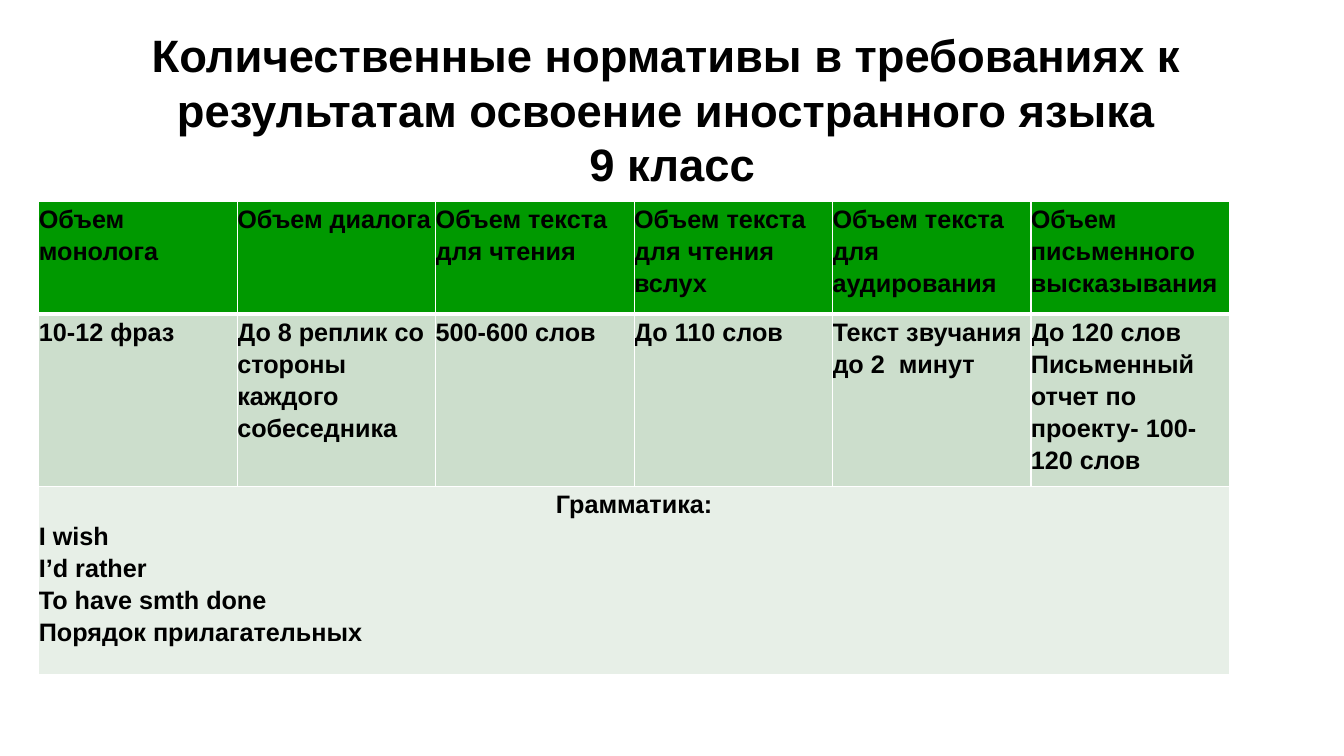
from pptx import Presentation
from pptx.dml.color import RGBColor
from pptx.enum import text
from pptx.oxml import parse_xml
from pptx.oxml.ns import nsdecls
from pptx.util import Cm, Pt

FONT = "Arial"
COLORS = {
    "ink": "000000",
    "border": "FFFFFF",
    "header": "009900",
    "norms": "CCDECC",
    "grammar": "E7EFE7",
}
TITLE = (
    "Количественные нормативы в требованиях к \v"
    "результатам освоение иностранного языка \v"
    "9 класс"
)
HEADERS = [
    "Объем монолога",
    "Объем диалога",
    "Объем текста для чтения",
    "Объем текста для чтения вслух",
    "Объем текста для аудирования",
    "Объем письменного высказывания",
]
NORMS = [
    "10-12 фраз",
    "До 8 реплик со стороны каждого собеседника",
    "500-600 слов",
    "До 110 слов",
    "Текст звучания до 2  минут",
    "До 120 слов\nПисьменный отчет по проекту- 100-120 слов",
]
GRAMMAR = "Грамматика:\nI wish\nI’d rather \nTo have smth done\nПорядок прилагательных"
ROW_HEIGHTS = [Cm(2.84), Cm(3.81), Cm(4.75)]
COLUMN_WIDTH = Cm(5)


def style_runs(paragraph, size):
    for run in paragraph.runs:
        run.font.name = FONT
        run.font.size = Pt(size)
        run.font.bold = True
        run.font.color.rgb = RGBColor.from_string(COLORS["ink"])


def add_title(slide):
    frame = slide.shapes.add_textbox(Cm(1.7), Cm(0.6), Cm(30.48), Cm(4.3)).text_frame
    frame.word_wrap = True
    frame.vertical_anchor = text.MSO_ANCHOR.MIDDLE
    frame.text = TITLE
    heading = frame.paragraphs[0]
    heading.alignment = text.PP_ALIGN.CENTER
    style_runs(heading, 32.4)


def set_borders(cell, bottom_width):
    properties = cell._tc.get_or_add_tcPr()
    widths = {"lnL": 1, "lnR": 1, "lnT": 1, "lnB": bottom_width}
    for position, (side, width) in enumerate(widths.items()):
        border = parse_xml(
            f'<a:{side} {nsdecls("a")} w="{Pt(width)}"><a:solidFill>'
            f'<a:srgbClr val="{COLORS["border"]}"/></a:solidFill></a:{side}>'
        )
        properties.insert(position, border)


def fill_cell(cell, content, color, bottom_width=1):
    cell.margin_left = cell.margin_right = cell.margin_top = cell.margin_bottom = 0
    cell.fill.solid()
    cell.fill.fore_color.rgb = RGBColor.from_string(COLORS[color])
    set_borders(cell, bottom_width)
    cell.text_frame.text = content
    for paragraph in cell.text_frame.paragraphs:
        paragraph.line_spacing = 1.14
        style_runs(paragraph, 18)


def add_norms_table(slide):
    columns = len(HEADERS)
    table = slide.shapes.add_table(
        len(ROW_HEIGHTS), columns, Cm(0.98), Cm(5.08),
        COLUMN_WIDTH * columns, sum(ROW_HEIGHTS),
    ).table
    for row, height in zip(table.rows, ROW_HEIGHTS):
        row.height = height
    for column, (header, norm) in enumerate(zip(HEADERS, NORMS)):
        table.columns[column].width = COLUMN_WIDTH
        fill_cell(table.cell(0, column), header, "header", 3)
        fill_cell(table.cell(1, column), norm, "norms")

    grammar = table.cell(2, 0)
    grammar.merge(table.cell(2, columns - 1))
    fill_cell(grammar, GRAMMAR, "grammar")
    heading, *topics = grammar.text_frame.paragraphs
    heading.alignment = text.PP_ALIGN.CENTER
    for topic in topics:
        topic.alignment = text.PP_ALIGN.JUSTIFY


def main():
    presentation = Presentation()
    presentation.slide_width = Cm(33.87)
    presentation.slide_height = Cm(19.05)
    slide = presentation.slides.add_slide(presentation.slide_layouts[6])
    add_title(slide)
    add_norms_table(slide)
    presentation.save("out.pptx")


if __name__ == "__main__":
    main()
